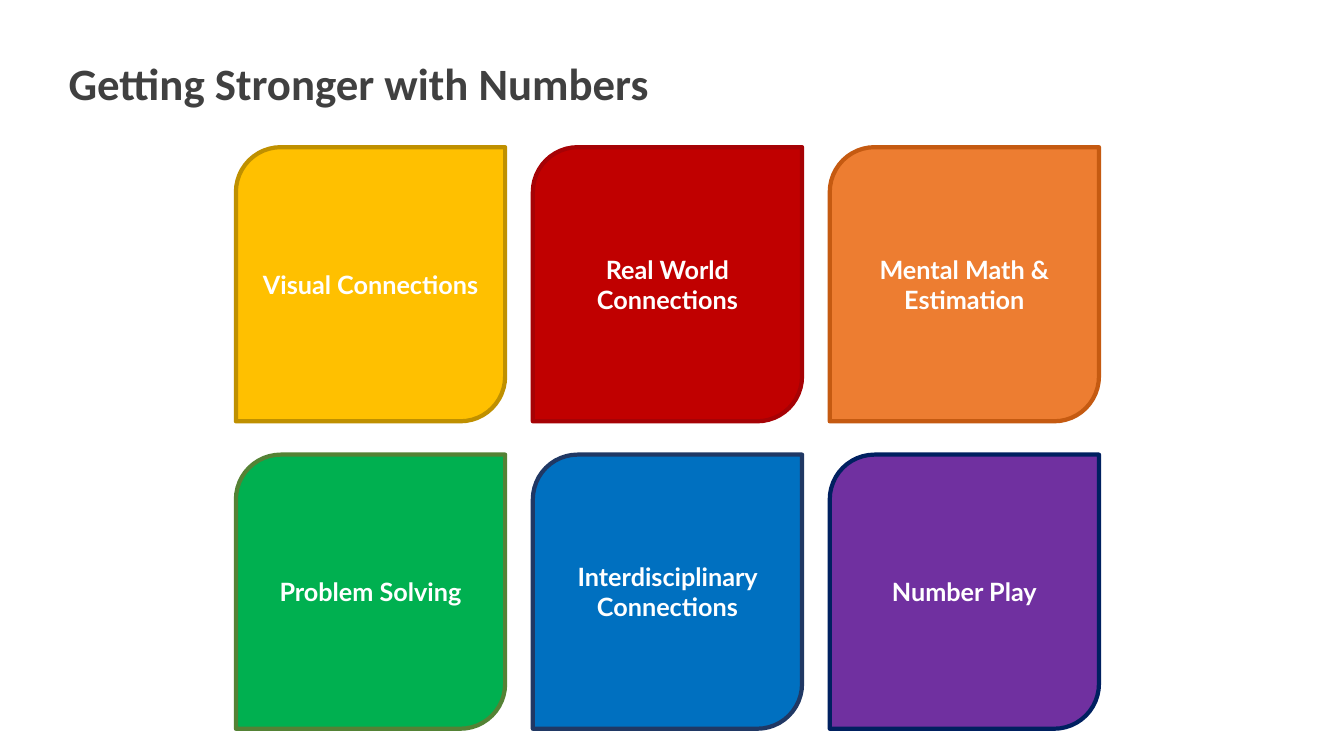
import pptx
import pptx.util
import pptx.dml.color
import pptx.enum.shapes
import pptx.enum.text

Inches = pptx.util.Inches
Pt = pptx.util.Pt

COLORS = {
    "title": "404040", "text": "FFFFFF",
    "yellow": "FFC000", "yellow_line": "BF9000",
    "red": "C00000", "red_line": "A60205",
    "orange": "ED7D31", "orange_line": "C55A11",
    "green": "00B050", "green_line": "548235",
    "blue": "0070C0", "blue_line": "203864",
    "purple": "7030A0", "purple_line": "002060",
}

TILES = [
    ("Visual Connections", "yellow"),
    ("Real World Connections", "red"),
    ("Mental Math & Estimation", "orange"),
    ("Problem Solving", "green"),
    ("Interdisciplinary Connections", "blue"),
    ("Number Play", "purple"),
]
COLUMNS = 3
ROWS = 2
TILE_WIDTH = 2.67
TILE_HEIGHT = 2.72


def color(name):
    return pptx.dml.color.RGBColor.from_string(COLORS[name])


def format_text(p, font, size, color_name):
    for r in p.runs:
        r.font.name = font
        r.font.size = Pt(size)
        r.font.bold = True
        r.font.color.rgb = color(color_name)


def add_title(slide, text, left, top, width, height):
    sp = slide.shapes.add_textbox(Inches(left), Inches(top), Inches(width), Inches(height))
    tf = sp.text_frame
    tf.word_wrap = True
    tf.vertical_anchor = pptx.enum.text.MSO_ANCHOR.BOTTOM
    tf.margin_left = tf.margin_right = tf.margin_top = tf.margin_bottom = Inches(0.13)
    p = tf.paragraphs[0]
    p.text = text
    p.line_spacing = 0.9
    format_text(p, "Calibri", 32, "title")


def add_tile(slide, text, color_name, left, top, width, height):
    sp = slide.shapes.add_shape(
        pptx.enum.shapes.MSO_SHAPE.ROUND_2_DIAG_RECTANGLE,
        Inches(left), Inches(top), Inches(width), Inches(height))
    sp.shadow.inherit = False
    sp.fill.solid()
    sp.fill.fore_color.rgb = color(color_name)
    sp.line.color.rgb = color(color_name + "_line")
    sp.line.width = Pt(3)
    tf = sp.text_frame
    tf.word_wrap = True
    tf.vertical_anchor = pptx.enum.text.MSO_ANCHOR.MIDDLE
    p = tf.paragraphs[0]
    p.text = text
    p.alignment = pptx.enum.text.PP_ALIGN.CENTER
    format_text(p, "Lato", 18, "text")


def add_tile_grid(slide, left, top, width, height):
    step_x = (width - TILE_WIDTH) / (COLUMNS - 1)
    step_y = (height - TILE_HEIGHT) / (ROWS - 1)
    for i, (text, color_name) in enumerate(TILES):
        row, column = divmod(i, COLUMNS)
        add_tile(slide, text, color_name, left + column * step_x,
                 top + row * step_y, TILE_WIDTH, TILE_HEIGHT)


def main():
    prs = pptx.Presentation()
    prs.slide_width = Inches(13.33)
    prs.slide_height = Inches(7.5)
    slide = prs.slides.add_slide(prs.slide_layouts[6])
    add_title(slide, "Getting Stronger with Numbers", 0.55, 0.62, 8.76, 0.6)
    add_tile_grid(slide, 2.34, 1.46, 8.56, 5.77)
    prs.save("out.pptx")


if __name__ == "__main__":
    main()
